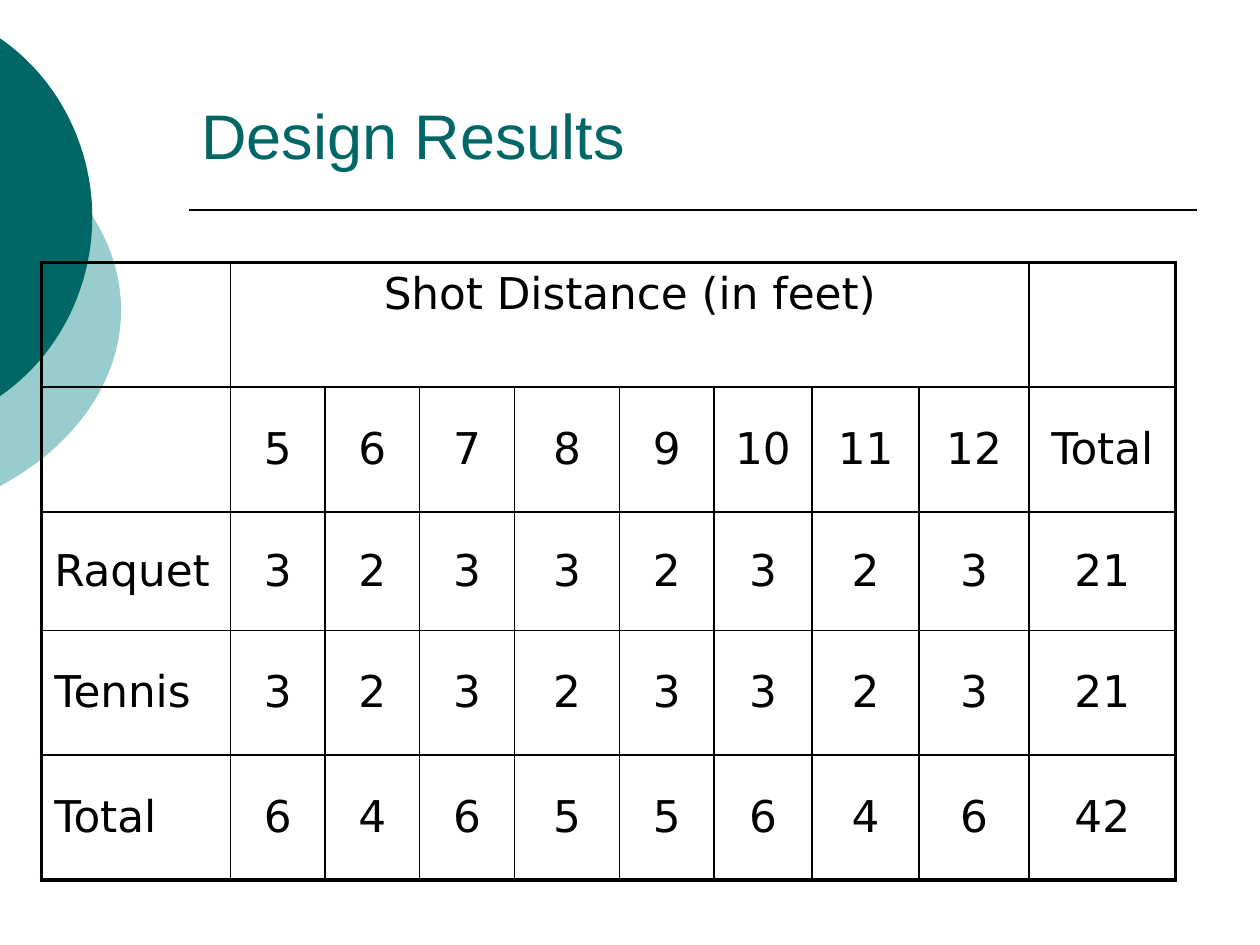
"""Build the Design Results slide with its table of shots by distance."""
import pptx
import pptx.util
import pptx.dml.color
import pptx.enum.shapes
import pptx.enum.text
import pptx.oxml
import pptx.oxml.ns
from lxml import etree

Cm, Pt = pptx.util.Cm, pptx.util.Pt
RGB = pptx.dml.color.RGBColor
ALIGN, ANCHOR = pptx.enum.text.PP_ALIGN, pptx.enum.text.MSO_ANCHOR
qn = pptx.oxml.ns.qn

TEAL = RGB(0x00, 0x66, 0x66)
PALE = RGB(0x99, 0xCC, 0xCC)
BLACK = RGB(0x00, 0x00, 0x00)

TITLE = "Design Results"
HEAD = "Shot Distance (in feet)"
ROWS = [
    ["", HEAD] + [""] * 8,
    ["", "5", "6", "7", "8", "9", "10", "11", "12", "Total"],
    ["Raquet", "3", "2", "3", "3", "2", "3", "2", "3", "21"],
    ["Tennis", "3", "2", "3", "2", "3", "3", "2", "3", "21"],
    ["Total", "6", "4", "6", "5", "5", "6", "4", "6", "42"],
]
WIDTHS = [3.81, 1.9, 1.91, 1.91, 2.12, 1.9, 1.98, 2.16, 2.21, 2.96]
HEIGHTS = [2.51, 2.52, 2.39, 2.51, 2.52]
DISCS = [
    (PALE, (-8.99, 1.91, 11.43, 8.69),
     [(-0.02, 2.69), (1.52, 3.51), (2.44, 4.83), (2.44, 6.25)]),
    (TEAL, (-6.73, 0, 8.59, 8.76),
     [(-0.02, 0.76), (1.17, 1.57), (1.86, 2.95), (1.86, 4.38)]),
]
TITLE_FONT = {"name": "Arial", "size": Pt(36)}
CELL_FONT = {"name": "DejaVu Sans", "size": Pt(25)}
THIN, THICK = Pt(1), Pt(2.25)


def style(para, text, font, color):
    run = para.add_run()
    run.text = text
    for key, value in font.items():
        setattr(run.font, key, value)
    run.font.color.rgb = color


def add_step(route, tag, dots):
    step = etree.SubElement(route, qn(tag))
    for x, y in dots:
        etree.SubElement(step, qn("a:pt"), x=str(int(x)), y=str(int(y)))


def add_disc(shapes, color, box, knots):
    left, top, width, height = (Cm(v) for v in box)
    mid = knots[-1][1]
    arc = knots + [(x, 2 * mid - y) for x, y in reversed(knots[:-1])]
    dots = [(Cm(x) - left, Cm(y) - top) for x, y in arc]
    form = shapes.build_freeform(0, 0)
    form.add_line_segments([(width, 0), (width, height)])
    disc = form.convert_to_shape(left, top)
    route = disc._element.spPr.find(".//" + qn("a:path"))
    for step in list(route):
        route.remove(step)
    add_step(route, "a:moveTo", dots[:1])
    add_step(route, "a:cubicBezTo", dots[1:4])
    add_step(route, "a:cubicBezTo", dots[4:])
    add_step(route, "a:close", [])
    disc.shadow.inherit = False
    disc.fill.solid()
    disc.fill.fore_color.rgb = color
    disc.line.fill.background()


def add_title(shapes):
    box = shapes.add_textbox(Cm(3.81), Cm(0.83), Cm(20.32), Cm(2.77))
    frame = box.text_frame
    frame.word_wrap = True
    frame.vertical_anchor = ANCHOR.BOTTOM
    style(frame.paragraphs[0], TITLE, TITLE_FONT, TEAL)


def add_rule(shapes):
    kind = pptx.enum.shapes.MSO_CONNECTOR.STRAIGHT
    rule = shapes.add_connector(kind, Cm(3.81), Cm(4.24), Cm(24.13), Cm(4.24))
    rule.line.color.rgb = BLACK
    rule.line.width = THIN
    etree.SubElement(rule._element.spPr, qn("a:effectLst"))


def add_edge(cell, side, width):
    props = cell._tc.get_or_add_tcPr()
    props.append(pptx.oxml.parse_xml(
        f'<a:ln{side} {pptx.oxml.ns.nsdecls("a")} w="{int(width)}">'
        f'<a:solidFill><a:srgbClr val="{BLACK}"/></a:solidFill></a:ln{side}>'))


def add_table(shapes):
    size = Cm(sum(WIDTHS)), Cm(sum(HEIGHTS))
    table = shapes.add_table(len(ROWS), len(WIDTHS), Cm(0.84), Cm(5.29), *size).table
    table.first_row = table.horz_banding = False
    for col, width in zip(table.columns, WIDTHS):
        col.width = Cm(width)
    for row, height in zip(table.rows, HEIGHTS):
        row.height = Cm(height)
    last_row, last_col = len(ROWS) - 1, len(WIDTHS) - 1
    for r, row in enumerate(ROWS):
        for c, text in enumerate(row):
            cell = table.cell(r, c)
            outer = {"L": c == 0, "R": c == last_col, "T": r == 0, "B": r == last_row}
            for side, thick in outer.items():
                add_edge(cell, side, THICK if thick else THIN)
            cell.fill.background()
            cell.vertical_anchor = ANCHOR.MIDDLE if r else ANCHOR.TOP
            if text:
                para = cell.text_frame.paragraphs[0]
                para.alignment = ALIGN.CENTER if c else ALIGN.LEFT
                style(para, text, CELL_FONT, BLACK)
    table.cell(0, 1).merge(table.cell(0, last_col - 1))


def main():
    deck = pptx.Presentation()
    deck.slide_width, deck.slide_height = Cm(25.4), Cm(19.05)
    shapes = deck.slides.add_slide(deck.slide_layouts[6]).shapes
    for disc in DISCS:
        add_disc(shapes, *disc)
    add_rule(shapes)
    add_title(shapes)
    add_table(shapes)
    deck.save("out.pptx")


if __name__ == "__main__":
    main()
